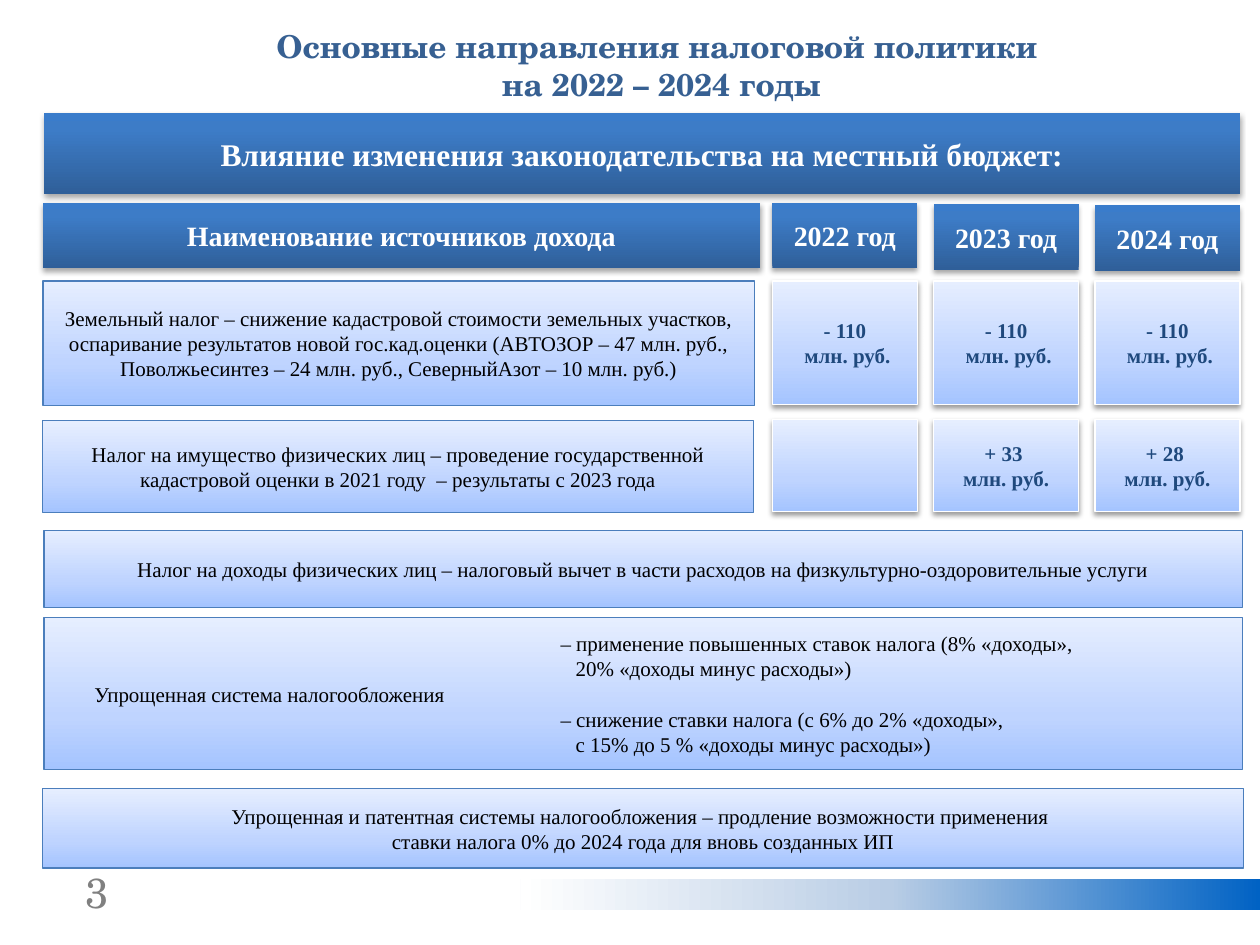
from dataclasses import dataclass

from lxml.etree import SubElement
from pptx import Presentation
from pptx.dml.color import RGBColor
from pptx.enum.shapes import MSO_SHAPE
from pptx.enum.text import MSO_ANCHOR, PP_ALIGN
from pptx.oxml.ns import qn
from pptx.util import Inches, Pt


@dataclass(frozen=True)
class Theme:
    title_font: str = "TeX Gyre Schola"
    body_font: str = "Times New Roman"
    title: str = "376092"
    number: str = "808080"
    value: str = "1F497D"
    black: str = "000000"
    white: str = "FFFFFF"
    border: str = "4B7EBC"
    dark: tuple = ((0, "2F5F99"), (80, "3D7CC7"), (100, "3A7CCB"))
    light: tuple = ((0, "A4C4FF"), (35, "BFD4FF"), (100, "E6EEFF"))
    stripe: tuple = ((0, "0062C4"), (50, "B9CDE5"), (100, "FFFFFF"))
    number_size: int = 24
    title_size: int = 18
    head_size: int = 16
    body_size: int = 12


class Deck:
    def __init__(self, theme):
        self.theme = theme
        self.prs = Presentation()
        self.prs.slide_width, self.prs.slide_height = Inches(10), Inches(7.5)
        self.s = self.prs.slides.add_slide(self.prs.slide_layouts[6])

    def add_text(self, sp, lines, size, color, bold=False, font=None, align=PP_ALIGN.CENTER):
        tf = sp.text_frame
        tf.word_wrap = True
        tf.vertical_anchor = MSO_ANCHOR.MIDDLE
        style = {"size": Pt(size), "bold": bold, "name": font or self.theme.body_font}
        for i, line in enumerate(lines):
            p = tf.paragraphs[0] if i == 0 else tf.add_paragraph()
            p.alignment = align
            p.text = line
            for r in p.runs:
                for key, value in style.items():
                    setattr(r.font, key, value)
                r.font.color.rgb = RGBColor.from_string(color)

    def label(self, box, lines, **style):
        tb = self.s.shapes.add_textbox(*map(Inches, box))
        self.add_text(tb, lines, **style)

    def block(self, box, stops, angle=90, line=None, shadow=None,
              preset=MSO_SHAPE.ROUNDED_RECTANGLE):
        """Gradient rectangle; shadow is (opacity %, distance in points)."""
        sp = self.s.shapes.add_shape(preset, *map(Inches, box))
        if preset == MSO_SHAPE.ROUNDED_RECTANGLE:
            sp.adjustments[0] = 0
        sp.fill.gradient()
        sp.fill.gradient_angle = angle
        props = sp._element.spPr
        gs_list = props.find(qn("a:gradFill")).find(qn("a:gsLst"))
        gs_list.clear()
        for pos, color in stops:
            gs = SubElement(gs_list, qn("a:gs"), pos=str(pos * 1000))
            SubElement(gs, qn("a:srgbClr"), val=color)
        if line:
            sp.line.color.rgb = RGBColor.from_string(line)
            sp.line.width = Pt(0.75)
        else:
            sp.line.fill.background()
        sp.shadow.inherit = False
        if shadow:
            opacity, distance = shadow
            outer = SubElement(props.find(qn("a:effectLst")), qn("a:outerShdw"),
                               blurRad=str(Pt(3.1)), dist=str(Pt(distance)),
                               dir="5400000", rotWithShape="0")
            clr = SubElement(outer, qn("a:srgbClr"), val=self.theme.black)
            SubElement(clr, qn("a:alpha"), val=str(opacity * 1000))
        return sp

    def header(self, box, text, size):
        sp = self.block(box, self.theme.dark, shadow=(35, 1.8))
        self.add_text(sp, [text], size, self.theme.white, bold=True)

    def note(self, box, lines, align=PP_ALIGN.CENTER):
        sp = self.block(box, self.theme.light, line=self.theme.border)
        self.add_text(sp, lines, self.theme.body_size, self.theme.black, align=align)
        return sp

    def amount(self, box, lines):
        sp = self.block(box, self.theme.light, line=self.theme.white, shadow=(38, 1.6))
        self.add_text(sp, lines, self.theme.body_size, self.theme.value, bold=True)

    def indent(self, p, left, first=0.0):
        props = p._p.get_or_add_pPr()
        props.set("marL", str(Inches(left)))
        props.set("indent", str(Inches(first)))


def main():
    t = Theme()
    deck = Deck(t)

    deck.label((0.33, 6.85, 0.63, 0.45), ["3"], size=t.number_size, color=t.number,
               font=t.title_font, align=PP_ALIGN.RIGHT)
    deck.label((0.75, 0.16, 9, 0.71),
               ["Основные направления налоговой политики ", "на 2022 – 2024 годы"],
               size=t.title_size, color=t.title, bold=True, font=t.title_font)
    deck.block((4.13, 6.98, 5.87, 0.24), t.stripe, angle=180, preset=MSO_SHAPE.RECTANGLE)

    deck.header((0.35, 0.9, 9.49, 0.64),
                "Влияние изменения законодательства на местный бюджет:", t.title_size)
    deck.header((0.34, 1.61, 5.69, 0.52), "Наименование источников дохода", t.head_size)

    land = ["- 110", " млн. руб."]
    columns = [
        ("2022 год", land, []),
        ("2023 год", land, ["+ 33 ", "млн. руб."]),
        ("2024 год", land, ["+ 28 ", "млн. руб."]),
    ]
    for i, (year, land_sum, property_sum) in enumerate(columns):
        x = 6.13 + 1.28 * i
        deck.header((x, 1.61 + 0.01 * i, 1.15, 0.52), year, t.head_size)
        deck.amount((x, 2.23, 1.15, 0.98), land_sum)
        deck.amount((x, 3.33, 1.15, 0.73), property_sum)

    deck.note((0.34, 2.23, 5.65, 0.99), [
        "Земельный налог – снижение кадастровой стоимости земельных участков, "
        "оспаривание результатов новой гос.кад.оценки (АВТОЗОР – 47 млн. руб., "
        "Поволжьесинтез – 24 млн. руб., СеверныйАзот – 10 млн. руб.)"])
    deck.note((0.34, 3.34, 5.64, 0.73), [
        "Налог на имущество физических лиц – проведение государственной "
        "кадастровой оценки в 2021 году  – результаты с 2023 года"])
    deck.note((0.35, 4.21, 9.51, 0.61), [
        "Налог на доходы физических лиц – налоговый вычет в части расходов "
        "на физкультурно-оздоровительные услуги"])
    simplified = deck.note((0.35, 4.9, 9.51, 1.21), [
        "– применение повышенных ставок налога (8% «доходы»,\v20% «доходы минус расходы»)",
        "Упрощенная система налогообложения",
        "– снижение ставки налога (с 6% до 2% «доходы»,\vс 15% до 5 % «доходы минус расходы»)",
    ], align=PP_ALIGN.LEFT)
    raised, name, lowered = simplified.text_frame.paragraphs
    deck.indent(name, 0.3)
    for p in (raised, lowered):
        deck.indent(p, 4.12, -0.12)
    deck.note((0.34, 6.26, 9.53, 0.63), [
        "Упрощенная и патентная системы налогообложения – продление возможности применения ",
        "ставки налога 0% до 2024 года для вновь созданных ИП"])

    deck.prs.save("out.pptx")


if __name__ == "__main__":
    main()
